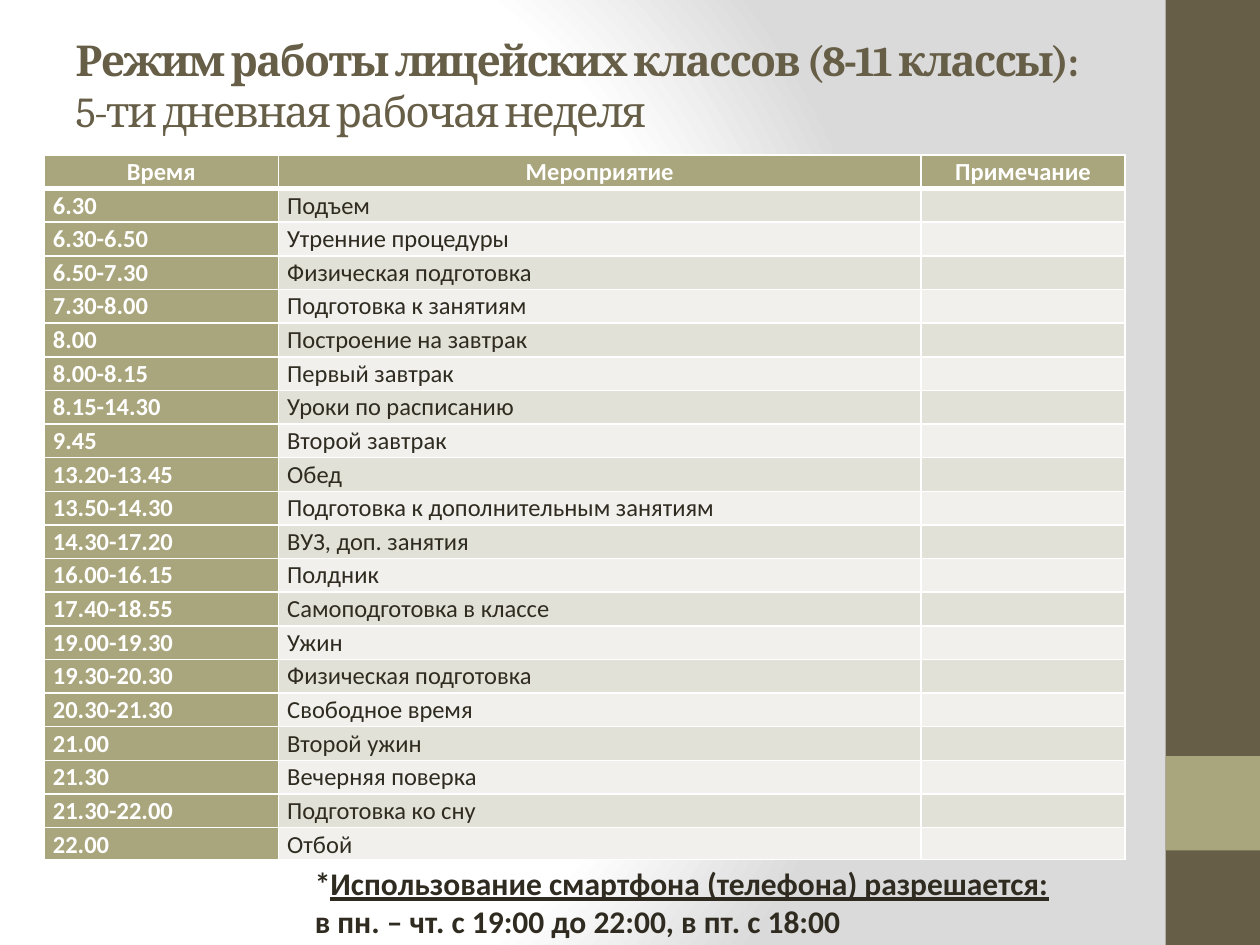
"""Build the slide with the daily schedule of the lyceum classes."""
from typing import Any, NamedTuple

from lxml import etree
from pptx import Presentation
from pptx.dml.color import RGBColor
from pptx.enum.shapes import MSO_SHAPE
from pptx.enum.text import MSO_ANCHOR, MSO_AUTO_SIZE, PP_ALIGN
from pptx.oxml import parse_xml
from pptx.oxml.ns import nsdecls, qn
from pptx.util import Emu, Inches, Pt

RECT = MSO_SHAPE.RECTANGLE
MIDDLE, TOP = MSO_ANCHOR.MIDDLE, MSO_ANCHOR.TOP
LEFT, CENTER = PP_ALIGN.LEFT, PP_ALIGN.CENTER
FIXED = MSO_AUTO_SIZE.NONE

WIDE, HIGH = Inches(10), Inches(7.5)
DARK, OLIVE, INK, WHITE = "675E47", "A9A57C", "2F2B20", "FFFFFF"
BANDS = ("E2E1D7", "F1F0EC")
COLS = (18.6, 51, 16.2)
ROW, LAST = 3.56, 3.33
HEADS = ("Время", "Мероприятие", "Примечание")


class Box(NamedTuple):
    """Left, top, width and height in percent of the slide."""
    left: float
    top: float
    width: float
    height: float


class Bar(NamedTuple):
    """A filled block of the side strip."""
    box: Box
    fill: str


class Event(NamedTuple):
    """One line of the schedule."""
    time: str
    name: str


BARS = (Bar(Box(92.5, 0, 7.5, 100), DARK), Bar(Box(92.5, 80, 7.5, 10), OLIVE))
EVENTS = (
    Event("6.30", "Подъем"),
    Event("6.30-6.50", "Утренние процедуры"),
    Event("6.50-7.30", "Физическая подготовка"),
    Event("7.30-8.00", "Подготовка к занятиям"),
    Event("8.00", "Построение на завтрак"),
    Event("8.00-8.15", "Первый завтрак"),
    Event("8.15-14.30", "Уроки по расписанию"),
    Event("9.45", "Второй завтрак"),
    Event("13.20-13.45", "Обед"),
    Event("13.50-14.30", "Подготовка к дополнительным занятиям"),
    Event("14.30-17.20", "ВУЗ, доп. занятия"),
    Event("16.00-16.15", "Полдник"),
    Event("17.40-18.55", "Самоподготовка в классе"),
    Event("19.00-19.30", "Ужин"),
    Event("19.30-20.30", "Физическая подготовка"),
    Event("20.30-21.30", "Свободное время"),
    Event("21.00", "Второй ужин"),
    Event("21.30", "Вечерняя поверка"),
    Event("21.30-22.00", "Подготовка ко сну"),
    Event("22.00", "Отбой"),
)


def across(part: float) -> Emu:
    """Turn a percent of the slide width into a length."""
    return Emu(round(WIDE * part / 100))


def down(part: float) -> Emu:
    """Turn a percent of the slide height into a length."""
    return Emu(round(HIGH * part / 100))


def place(box: Box) -> tuple[Emu, Emu, Emu, Emu]:
    """Turn a box into slide lengths."""
    return across(box.left), down(box.top), across(box.width), down(box.height)


def paint(target: Any, color: str) -> None:
    """Fill a shape or cell with a plain colour."""
    target.fill.solid()
    target.fill.fore_color.rgb = RGBColor.from_string(color)


def apply(target: Any, **values: Any) -> None:
    """Set attributes from format values."""
    for key, value in values.items():
        setattr(target, key, value)


def write(para: Any, text: str, color: str, **values: Any) -> Any:
    """Add a formatted run to a paragraph."""
    run = para.add_run()
    run.text = text
    apply(run.font, **values)
    run.font.color.rgb = RGBColor.from_string(color)
    return run


def shade(slide: Any) -> None:
    """Give the slide a round gradient from white to grey."""
    slide.background.fill.gradient()
    stops = "".join(
        f'<a:gs pos="{pos * 1000}"><a:srgbClr val="{color}"/></a:gs>'
        for pos, color in ((0, WHITE), (75, WHITE), (100, "DADADA")))
    old = next(slide.element.iter(qn("a:gradFill")))
    old.getparent().replace(old, parse_xml(
        f'<a:gradFill {nsdecls("a")} rotWithShape="1"><a:gsLst>{stops}</a:gsLst>'
        '<a:path path="circle"><a:fillToRect l="20000" t="50000" r="100000" '
        'b="50000"/></a:path></a:gradFill>'))


def block(slide: Any, bar: Bar) -> None:
    """Draw one block of the side strip."""
    shape = slide.shapes.add_shape(RECT, *place(bar.box))
    shape.shadow.inherit = False
    shape.line.fill.background()
    paint(shape, bar.fill)


def head(slide: Any) -> None:
    """Fill the title placeholder."""
    title = slide.shapes.title
    spots = zip(("left", "top", "width", "height"), place(Box(5, 2.7, 90, 12.5)))
    apply(title, **dict(spots))
    apply(title.text_frame, word_wrap=True, auto_size=FIXED,
          vertical_anchor=MIDDLE)
    para = title.text_frame.paragraphs[0]
    para.alignment = LEFT
    look = {"size": Pt(24.3), "name": "Cambria"}
    runs = [write(para, "Режим работы лицейских классов (8-11 классы):", DARK,
                  bold=True, **look)]
    para.add_line_break()
    runs.append(write(para, "5-ти дневная рабочая неделя", DARK, bold=False, **look))
    for run in runs:
        run.font._element.set("spc", "-100")


def edge(cell: Any, base: int) -> None:
    """Draw white cell borders with the given bottom width."""
    props = cell._tc.get_or_add_tcPr()
    for spot, (side, width) in enumerate(zip("LRTB", (1, 1, 1, base))):
        props.insert(spot, parse_xml(
            f'<a:ln{side} {nsdecls("a")} w="{Pt(width)}"><a:solidFill>'
            f'<a:srgbClr val="{WHITE}"/></a:solidFill></a:ln{side}>'))


def fill(cell: Any, text: str, back: str, top: bool) -> None:
    """Format one cell and write its text."""
    apply(cell, margin_left=Inches(0.07), margin_right=Inches(0.07),
          margin_top=0, margin_bottom=0, vertical_anchor=TOP)
    paint(cell, back)
    edge(cell, 3 if top else 1)
    para = cell.text_frame.paragraphs[0]
    apply(para, alignment=CENTER if top else LEFT, line_spacing=1.07)
    key = back == OLIVE
    if text:
        write(para, text, WHITE if key else INK, size=Pt(14), name="Calibri", bold=key)
    else:
        etree.SubElement(para._p, qn("a:endParaRPr"), sz="1400")


def chart(slide: Any) -> None:
    """Draw the schedule table."""
    count = len(EVENTS) + 1
    box = Box(3.5, 16.4, sum(COLS), ROW * (count - 1) + LAST)
    table = slide.shapes.add_table(count, len(COLS), *place(box)).table
    apply(table, first_row=False, horz_banding=False)
    for col, width in zip(table.columns, COLS):
        col.width = across(width)
    lines = [HEADS] + [(*event, "") for event in EVENTS]
    for row, line in enumerate(lines):
        table.rows[row].height = down(LAST if row == count - 1 else ROW)
        for col, text in enumerate(line):
            back = OLIVE if row == 0 or col == 0 else BANDS[(row - 1) % 2]
            fill(table.cell(row, col), text, back, row == 0)


def note(slide: Any) -> None:
    """Write the phone rule below the table."""
    frame = slide.shapes.add_textbox(*place(Box(24, 90.8, 60.6, 9.2))).text_frame
    frame.word_wrap = True
    look = {"size": Pt(18), "name": "Calibri", "bold": True}
    para = frame.paragraphs[0]
    write(para, "*", INK, **look)
    write(para, "Использование смартфона (телефона) разрешается:", INK,
          underline=True, **look)
    write(frame.add_paragraph(), "в пн. – чт. с 19:00 до 22:00, в пт. с 18:00",
          INK, **look)


def main() -> None:
    """Build and save the slide."""
    deck = Presentation()
    apply(deck, slide_width=WIDE, slide_height=HIGH)
    slide = deck.slides.add_slide(deck.slide_layouts[5])
    shade(slide)
    for bar in BARS:
        block(slide, bar)
    head(slide)
    chart(slide)
    note(slide)
    deck.save("out.pptx")


if __name__ == "__main__":
    main()
